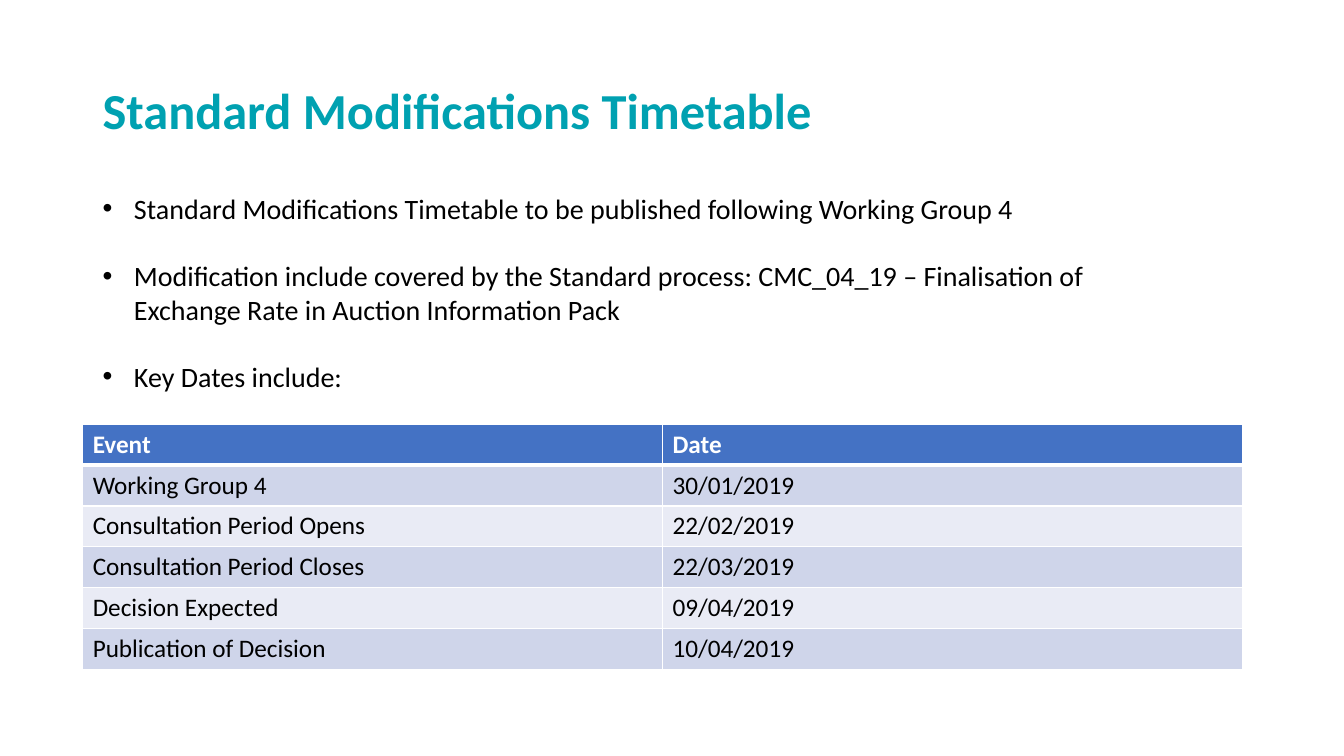
from lxml import etree
from pptx import Presentation
from pptx.dml.color import RGBColor
from pptx.enum.text import MSO_ANCHOR
from pptx.oxml.ns import qn
from pptx.util import Pt

PX = 4572  # 200 px to the inch
MIDDLE = MSO_ANCHOR.MIDDLE
TOP = MSO_ANCHOR.TOP


class Theme:
    font = "Calibri"
    title_size, bullet_size, table_size = 36, 20, 18
    teal, black, white = "00A1B1", "000000", "FFFFFF"
    header_fill = "4472C4"
    band_fills = ("CFD5EA", "E9EBF5")
    rule, header_rule = 1, 3


def write_text(frame, lines, size, color=Theme.black, bold=False, anchor=TOP,
               line_spacing=None, gap=0, bullet_indent=0):
    """Fill a text frame, one paragraph a line; gap is the points between paragraphs."""
    frame.word_wrap = True
    frame.vertical_anchor = anchor
    for index, line in enumerate(lines):
        paragraph = frame.paragraphs[0] if index == 0 else frame.add_paragraph()
        paragraph.line_spacing = line_spacing
        if index and gap:
            paragraph.space_before = Pt(gap)
        if bullet_indent:
            properties = paragraph._p.get_or_add_pPr()
            properties.set("marL", str(bullet_indent * PX))
            properties.set("indent", str(-bullet_indent * PX))
            etree.SubElement(properties, qn("a:buFont")).set("typeface", "Arial")
            etree.SubElement(properties, qn("a:buChar")).set("char", "•")
        run = paragraph.add_run()
        run.text = line
        run.font.name = Theme.font
        run.font.size = Pt(size)
        run.font.bold = bold
        run.font.color.rgb = RGBColor.from_string(color)


def set_borders(cell, top, bottom):
    """Draw white borders; top and bottom are widths in points."""
    properties = cell._tc.get_or_add_tcPr()
    sides = {"L": Theme.rule, "R": Theme.rule, "T": top, "B": bottom}
    for position, (side, width) in enumerate(sides.items()):
        border = etree.Element(qn(f"a:ln{side}"), w=str(Pt(width)))
        fill = etree.SubElement(border, qn("a:solidFill"))
        etree.SubElement(fill, qn("a:srgbClr")).set("val", Theme.white)
        properties.insert(position, border)


presentation = Presentation()
presentation.slide_width = 2666 * PX
presentation.slide_height = 1500 * PX
slide = presentation.slides.add_slide(presentation.slide_layouts[6])

title = slide.shapes.add_textbox(184 * PX, 80 * PX, 2300 * PX, 290 * PX)
write_text(title.text_frame, ["Standard Modifications Timetable"], Theme.title_size,
           color=Theme.teal, bold=True, anchor=MIDDLE, line_spacing=0.9)

key_dates = [
    ("Event", "Date"),
    ("Working Group 4", "30/01/2019"),
    ("Consultation Period Opens", "22/02/2019"),
    ("Consultation Period Closes", "22/03/2019"),
    ("Decision Expected", "09/04/2019"),
    ("Publication of Decision", "10/04/2019"),
]
row_height = 81
timetable = slide.shapes.add_table(len(key_dates), 2, 164 * PX, 842 * PX, 2300 * PX,
                                   len(key_dates) * row_height * PX).table
for row, entries in enumerate(key_dates):
    timetable.rows[row].height = row_height * PX
    is_header = row == 0
    fill_color = Theme.header_fill if is_header else Theme.band_fills[(row - 1) % 2]
    for column, entry in enumerate(entries):
        cell = timetable.cell(row, column)
        cell.fill.solid()
        cell.fill.fore_color.rgb = RGBColor.from_string(fill_color)
        set_borders(cell, top=Theme.header_rule if row == 1 else Theme.rule,
                    bottom=Theme.header_rule if is_header else Theme.rule)
        write_text(cell.text_frame, [entry], Theme.table_size, bold=is_header,
                   color=Theme.white if is_header else Theme.black)

summary = slide.shapes.add_textbox(184 * PX, 370 * PX, 2164 * PX, 484 * PX)
write_text(summary.text_frame, [
    "Standard Modifications Timetable to be published following Working Group 4",
    "Modification include covered by the Standard process: CMC_04_19 – "
    "Finalisation of Exchange Rate in Auction Information Pack",
    "Key Dates include:",
], Theme.bullet_size, gap=24, bullet_indent=62)

presentation.save("out.pptx")
